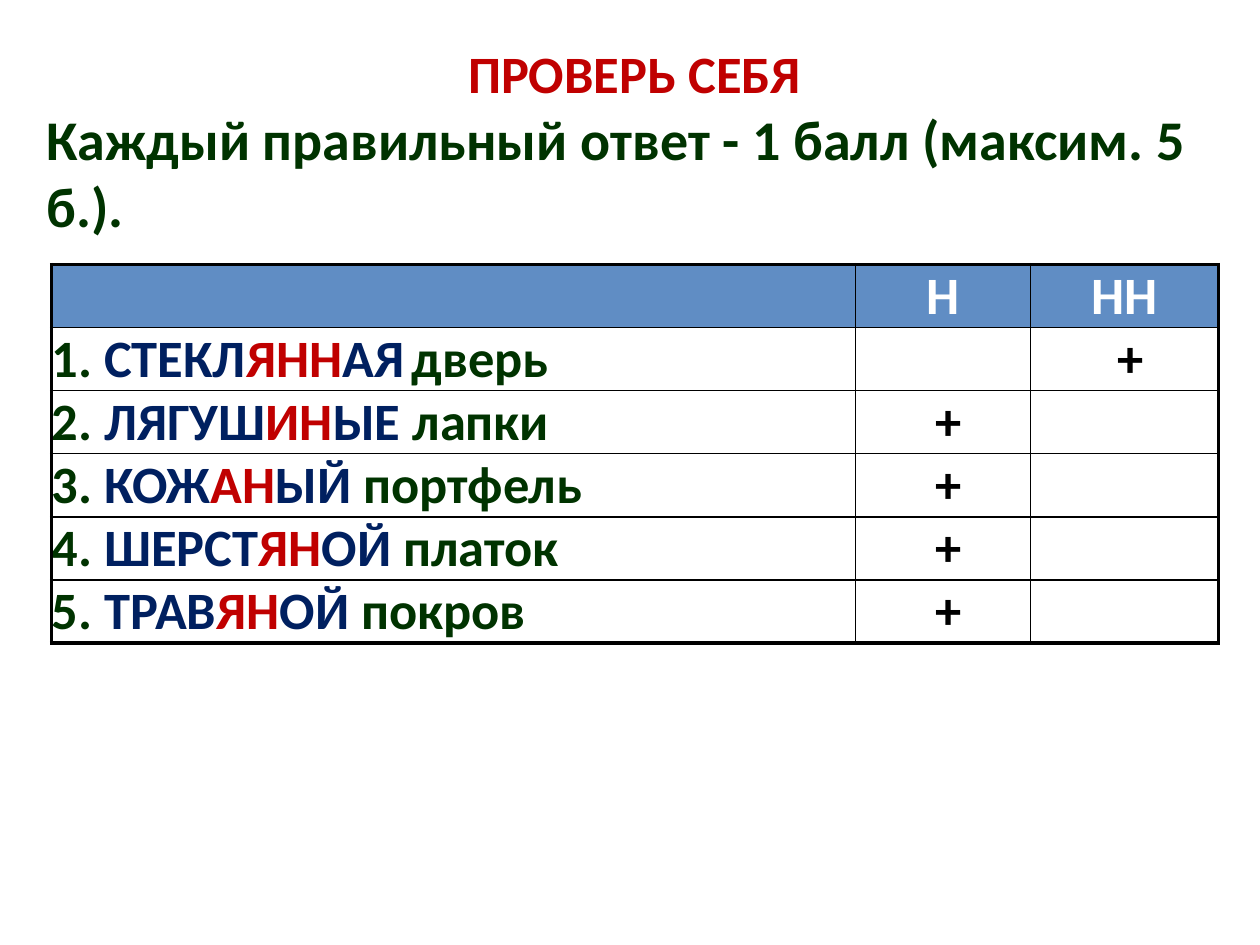
from lxml.etree import SubElement
from pptx import Presentation
from pptx.dml.color import RGBColor
from pptx.enum.text import MSO_AUTO_SIZE, PP_ALIGN
from pptx.oxml.ns import qn
from pptx.util import Inches, Pt

RED = RGBColor(0xC0, 0x00, 0x00)
GREEN = RGBColor(0x00, 0x33, 0x00)
NAVY = RGBColor(0x00, 0x20, 0x60)
BLUE = RGBColor(0x60, 0x8D, 0xC4)
WHITE = RGBColor(0xFF, 0xFF, 0xFF)
BLACK = RGBColor(0x00, 0x00, 0x00)

BASE = {"name": "Calibri", "size": Pt(30), "bold": True}
PLUS = " +"
WORDS = [
    ("СТЕКЛ", "ЯНН", "АЯ", "дверь", 2),
    ("ЛЯГУШ", "ИН", "ЫЕ", "лапки", 1),
    ("КОЖ", "АН", "ЫЙ", "портфель", 1),
    ("ШЕРСТ", "ЯН", "ОЙ", "платок", 1),
    ("ТРАВ", "ЯН", "ОЙ", "покров", 1),
]


def add_run(para, text, color, **extra):
    run = para.add_run()
    run.text = text
    for key, value in {**BASE, **extra}.items():
        setattr(run.font, key, value)
    run.font.color.rgb = color


def add_title(slide, left, top, width, height):
    frame = slide.shapes.add_textbox(left, top, width, height).text_frame
    frame.word_wrap = True
    frame.auto_size = MSO_AUTO_SIZE.SHAPE_TO_FIT_TEXT
    head = frame.paragraphs[0]
    head.alignment = PP_ALIGN.CENTER
    add_run(head, "ПРОВЕРЬ СЕБЯ", RED)
    add_run(frame.add_paragraph(),
            "Каждый правильный ответ - 1 балл (максим. 5 б.).",
            GREEN, size=Pt(32))


def set_edges(cell, widths):
    props = cell._tc.get_or_add_tcPr()
    for side, width in widths.items():
        line = SubElement(props, qn("a:ln" + side), w=str(Pt(width)))
        fill = SubElement(line, qn("a:solidFill"))
        SubElement(fill, qn("a:srgbClr"), val=str(BLACK))


def style_cell(cell, row, col, last_row, last_col):
    for side in ("left", "right", "top", "bottom"):
        setattr(cell, "margin_" + side, 0)
    outer = {"L": col == 0, "R": col == last_col,
             "T": row == 0, "B": row == last_row}
    set_edges(cell, {side: 2.25 if edge else 1 for side, edge in outer.items()})
    if row == 0:
        cell.fill.solid()
        cell.fill.fore_color.rgb = BLUE
    else:
        cell.fill.background()


def add_mark(cell, text, color):
    para = cell.text_frame.paragraphs[0]
    para.alignment = PP_ALIGN.CENTER
    add_run(para, text, color)


def add_answers(slide, left, top, width, height):
    count = len(WORDS) + 1
    table = slide.shapes.add_table(count, 3, left, top, width, height).table
    table.horz_banding = False
    for col, size in zip(table.columns, (6.38, 1.39, 1.49)):
        col.width = Inches(size)
    for row in range(count):
        for col in range(3):
            style_cell(table.cell(row, col), row, col, count - 1, 2)
    for col, text in enumerate(("Н", "НН"), 1):
        add_mark(table.cell(0, col), text, WHITE)
    for row, (stem, suffix, end, noun, mark) in enumerate(WORDS, 1):
        para = table.cell(row, 0).text_frame.paragraphs[0]
        add_run(para, f"{row}. ", GREEN)
        add_run(para, stem, NAVY)
        add_run(para, suffix, RED)
        add_run(para, end, NAVY)
        add_run(para, " ", NAVY, size=Pt(18 if row == 1 else 30))
        add_run(para, noun, GREEN)
        add_mark(table.cell(row, mark), PLUS, BLACK)


def main():
    deck = Presentation()
    deck.slide_width, deck.slide_height = Inches(10), Inches(7.5)
    slide = deck.slides.add_slide(deck.slide_layouts[6])
    add_title(slide, Inches(0.27), Inches(0.28), Inches(9.53), Inches(1.68))
    add_answers(slide, Inches(0.41), Inches(2.1), Inches(9.26), Inches(3))
    deck.save("out.pptx")


if __name__ == "__main__":
    main()
